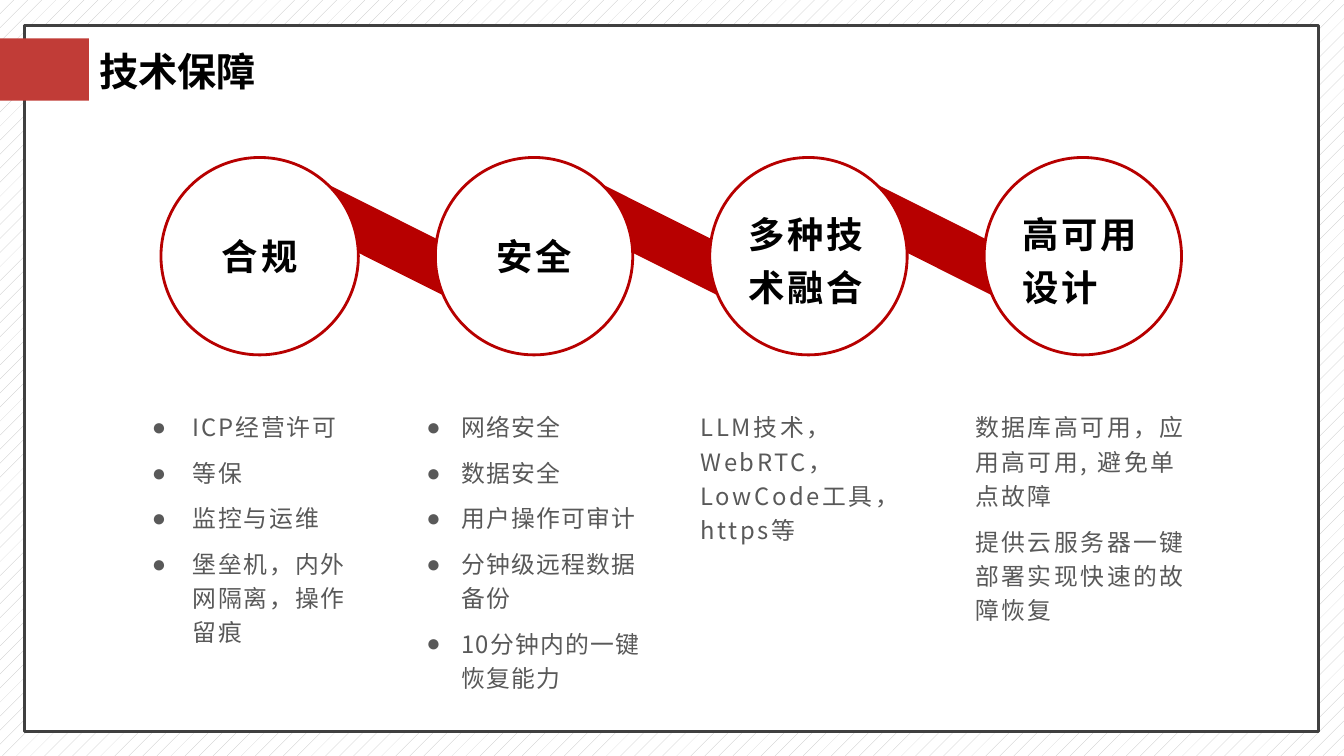
"""Build the technical assurance slide: four linked circles with notes below."""
from dataclasses import dataclass

from lxml.etree import SubElement
from pptx import Presentation
from pptx.dml.color import RGBColor
from pptx.enum.dml import MSO_PATTERN as Pattern
from pptx.enum.shapes import MSO_SHAPE as Kind
from pptx.enum.text import MSO_ANCHOR as Anchor, PP_ALIGN as Align
from pptx.oxml.ns import qn
from pptx.util import Emu, Pt

SCALE = 6350
STEP = 392
FACE = "Noto Sans CJK SC"
WHITE = RGBColor(0xFF, 0xFF, 0xFF)
BLACK = RGBColor(0x00, 0x00, 0x00)
DARK = RGBColor(0x40, 0x40, 0x40)
GREY = RGBColor(0x59, 0x59, 0x59)
HATCH = RGBColor(0xBF, 0xBF, 0xBF)
RED = RGBColor(0xB7, 0x00, 0x00)
BRICK = RGBColor(0xC1, 0x3C, 0x37)


@dataclass(frozen=True)
class Box:
    left: int
    top: int
    width: int
    height: int

    def shift(self, count: int) -> "Box":
        """Return the box moved right by a number of columns."""
        return Box(self.left + count * STEP, self.top, self.width, self.height)

    def emu(self) -> list[Emu]:
        """Return the four lengths in EMU."""
        return [Emu(n * SCALE) for n in (self.left, self.top, self.width, self.height)]


@dataclass(frozen=True)
class Style:
    size: int
    color: RGBColor
    bold: bool = False
    track: int = 0


@dataclass(frozen=True)
class Topic:
    name: str
    notes: tuple[str, ...]
    track: int
    head: int = 180
    indent: int = 0
    center: bool = False


FRAME = Box(35, 36, 1849, 1009)
TAG = Box(-4, 55, 131, 89)
TITLE = Box(128, 60, 831, 82)
BAR = Box(444, 311, 223, 68)
DISC = Box(230, 225, 282, 282)
BODY = Box(203, 575, 338, 491)

TOPICS = (
    Topic("合规", ("ICP经营许可", "等保", "监控与运维", "堡垒机，内外网隔离，操作留痕"),
          130, 220, 58, True),
    Topic("安全", ("网络安全", "数据安全", "用户操作可审计", "分钟级远程数据备份",
                 "10分钟内的一键恢复能力"), 90, 220, 50, True),
    Topic("多种技术融合", ("LLM技术， WebRTC， LowCode工具，https等",), 180),
    Topic("高可用设计", ("数据库高可用，应用高可用, 避免单点故障",
                    "提供云服务器一键部署实现快速的故障恢复"), 180),
)


def add_form(slide, kind: Kind, box: Box, fill: RGBColor, line: RGBColor | None = None):
    """Draw a filled shape, outlined if a line colour is given."""
    form = slide.shapes.add_shape(kind, *box.emu())
    form.shadow.inherit = False
    form.fill.solid()
    form.fill.fore_color.rgb = fill
    if line is None:
        form.line.fill.background()
    else:
        form.line.color.rgb = line
        form.line.width = Pt(2)
    return form


def add_text(para, text: str, style: Style, form: dict) -> None:
    """Write one run and apply paragraph and font values."""
    for key, value in form.items():
        setattr(para, key, value)
    run = para.add_run()
    run.text = text
    font = {"name": FACE, "size": Pt(style.size), "bold": style.bold}
    for key, value in font.items():
        setattr(run.font, key, value)
    run.font.color.rgb = style.color
    props = run._r.get_or_add_rPr()
    props.set("spc", str(style.track))
    SubElement(props, qn("a:ea")).set("typeface", FACE)


def add_bullet(para, indent: int) -> None:
    """Give a paragraph a hanging round bullet."""
    props = para._p.get_or_add_pPr()
    props.set("marL", str(indent * SCALE))
    props.set("indent", str(-indent * SCALE))
    SubElement(props, qn("a:buFont")).set("typeface", "Arial")
    SubElement(props, qn("a:buChar")).set("char", "●")


def add_frame(slide, box: Box):
    """Add a wrapping text box and return its text frame."""
    frame = slide.shapes.add_textbox(*box.emu()).text_frame
    frame.word_wrap = True
    return frame


def add_topic(slide, topic: Topic, index: int) -> None:
    """Draw a topic circle and the notes below it."""
    disc = add_form(slide, Kind.OVAL, DISC.shift(index), WHITE, RED)
    frame = disc.text_frame
    frame.word_wrap = True
    frame.vertical_anchor = Anchor.MIDDLE
    form = ({"alignment": Align.CENTER} if topic.center
            else {"alignment": Align.LEFT, "line_spacing": 1.2})
    add_text(frame.paragraphs[0], topic.name, Style(26, BLACK, True, topic.head), form)

    body = add_frame(slide, BODY.shift(index))
    style = Style(17, GREY, track=topic.track)
    for order, note in enumerate(topic.notes):
        para = body.add_paragraph() if order else body.paragraphs[0]
        if topic.indent:
            add_bullet(para, topic.indent)
        add_text(para, note, style, {"line_spacing": 1.2, "space_after": Pt(8)})


def main() -> None:
    """Build and save the slide."""
    deck = Presentation()
    deck.slide_width, deck.slide_height = Emu(1920 * SCALE), Emu(1080 * SCALE)
    slide = deck.slides.add_slide(deck.slide_layouts[6])
    back = slide.background.fill
    back.patterned()
    back.pattern = Pattern.PERCENT_5
    back.fore_color.rgb = HATCH
    back.back_color.rgb = WHITE

    add_form(slide, Kind.RECTANGLE, FRAME, WHITE, DARK)
    add_form(slide, Kind.RECTANGLE, TAG, BRICK)
    title = add_frame(slide, TITLE)
    add_text(title.paragraphs[0], "技术保障", Style(28, BLACK, True), {})

    for index in range(len(TOPICS) - 1):
        add_form(slide, Kind.RECTANGLE, BAR.shift(index), RED).rotation = 26.6
    for index, topic in enumerate(TOPICS):
        add_topic(slide, topic, index)
    deck.save("out.pptx")


if __name__ == "__main__":
    main()
